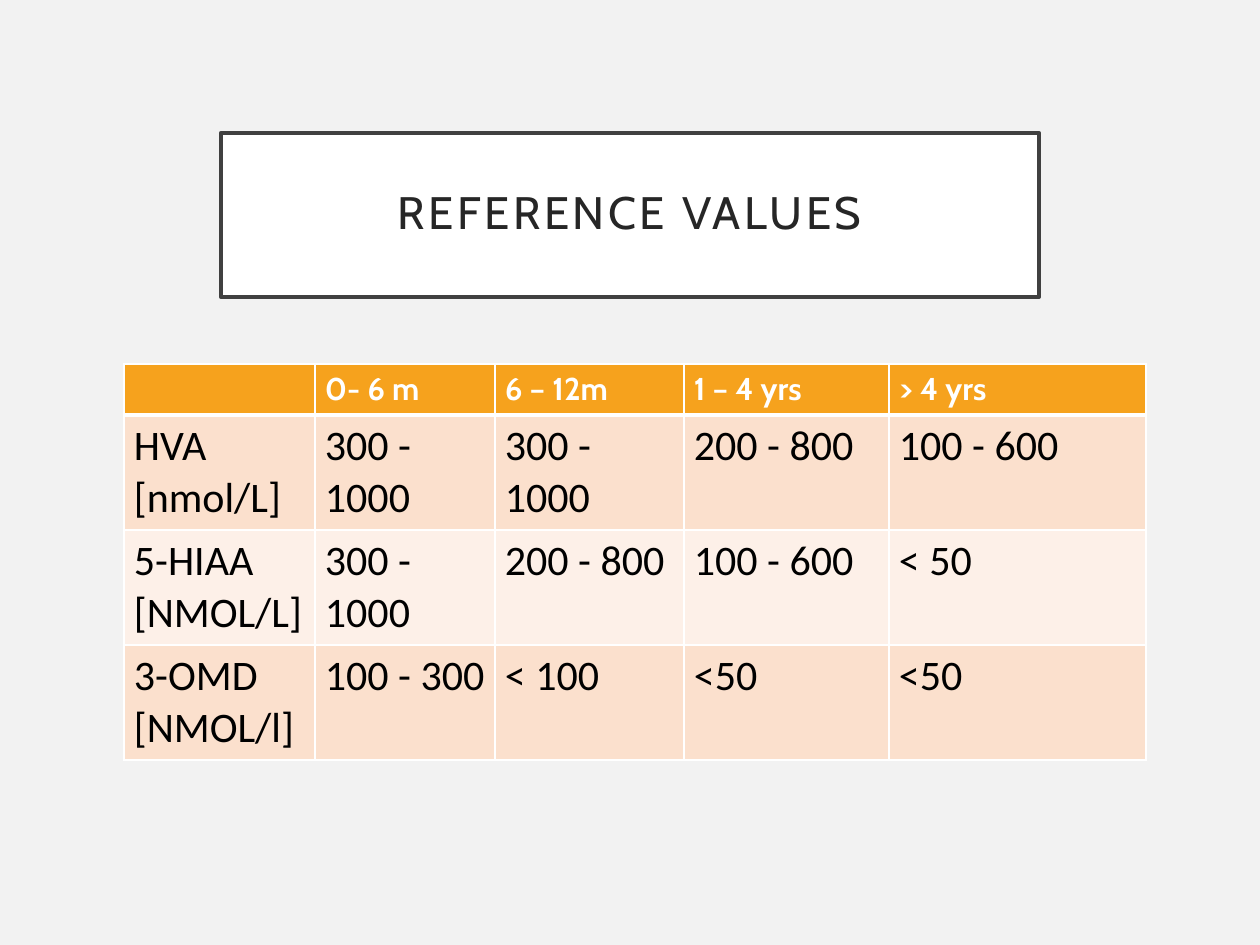
import lxml.etree
import pptx
import pptx.dml.color
import pptx.enum.shapes
import pptx.enum.text
import pptx.oxml.ns
import pptx.util

PX = 914400 / 126  # EMU in one px


def px(length):
    return pptx.util.Emu(round(length * PX))


def color(code):
    return pptx.dml.color.RGBColor.from_string(code)


class SlideBuilder:
    heading_font = "Cabin"
    body_font = "Calibri"
    white = "FFFFFF"
    header_fill = "F6A21D"
    band_fills = ("FBE0CD", "FDF0E8")

    def __init__(self, presentation, background):
        self.slide = presentation.slides.add_slide(presentation.slide_layouts[6])
        fill = self.slide.background.fill
        fill.solid()
        fill.fore_color.rgb = color(background)

    def style(self, paragraph, name, size, code, bold=False):
        font = paragraph.font
        font.name = name
        font.size = pptx.util.Pt(size)
        font.color.rgb = color(code)
        font.bold = bold

    def title(self, text, left, top, width, height):
        shape = self.slide.shapes.add_shape(
            pptx.enum.shapes.MSO_SHAPE.RECTANGLE,
            px(left), px(top), px(width), px(height))
        shape.shadow.inherit = False
        shape.fill.solid()
        shape.fill.fore_color.rgb = color(self.white)
        shape.line.color.rgb = color("404040")
        shape.line.width = pptx.util.Pt(2.5)
        frame = shape.text_frame
        frame.word_wrap = True
        frame.vertical_anchor = pptx.enum.text.MSO_ANCHOR.MIDDLE
        frame.margin_left = frame.margin_right = px(25)
        frame.margin_top = frame.margin_bottom = px(25)
        paragraph = frame.paragraphs[0]
        paragraph.alignment = pptx.enum.text.PP_ALIGN.CENTER
        paragraph.line_spacing = 0.9
        run = paragraph.add_run()
        run.text = text
        self.style(paragraph, self.heading_font, 26, "262626")
        run.font._element.set("spc", "200")  # letter spacing, 2 pt

    def borders(self, cell, **widths):
        properties = cell._tc.get_or_add_tcPr()
        for position, side in enumerate("LRTB"):
            line = lxml.etree.Element(
                pptx.oxml.ns.qn(f"a:ln{side}"),
                w=str(pptx.util.Pt(widths.get(side, 1))))
            fill = lxml.etree.SubElement(line, pptx.oxml.ns.qn("a:solidFill"))
            lxml.etree.SubElement(
                fill, pptx.oxml.ns.qn("a:srgbClr"), val=self.white)
            properties.insert(position, line)

    def cell(self, cell, text, row):
        header = row == 0
        cell.margin_left = cell.margin_right = px(10)
        cell.margin_top = cell.margin_bottom = px(6)
        cell.text = text
        paragraph = cell.text_frame.paragraphs[0]
        if header:
            self.style(paragraph, self.heading_font, 18, self.white, bold=True)
        else:
            self.style(paragraph, self.body_font, 24, "000000")
        cell.fill.solid()
        cell.fill.fore_color.rgb = color(
            self.header_fill if header else self.band_fills[(row - 1) % 2])
        # The rule under the header is thicker than the others
        self.borders(cell, B=3 if header else 1, T=3 if row == 1 else 1)

    def table(self, rows, left, top, widths, heights):
        table = self.slide.shapes.add_table(
            len(rows), len(widths), px(left), px(top),
            px(sum(widths)), px(sum(heights))).table
        for column, width in zip(table.columns, widths):
            column.width = px(width)
        for index, (values, height) in enumerate(zip(rows, heights)):
            table.rows[index].height = px(height)
            for column, text in enumerate(values):
                self.cell(table.cell(index, column), text, index)


def main():
    presentation = pptx.Presentation()
    presentation.slide_width = px(1260)
    presentation.slide_height = px(945)
    builder = SlideBuilder(presentation, "F2F2F2")

    # Title box
    builder.title("REFERENCE VALUES", 221, 133, 818, 164)

    # Reference values by age
    reference_values = [
        ("", "0- 6 m", "6 – 12m", "1 – 4 yrs", "> 4 yrs"),
        ("HVA [nmol/L]", "300 - 1000", "300 - 1000", "200 - 800", "100 - 600"),
        ("5-HIAA [NMOL/L]", "300 - 1000", "200 - 800", "100 - 600", "< 50"),
        ("3-OMD [NMOL/l]", "100 - 300", "< 100", "<50", "<50"),
    ]
    builder.table(reference_values, 124, 364,
                  widths=[191, 180, 189, 205, 257],
                  heights=[51, 115, 115, 115])

    presentation.save("out.pptx")


if __name__ == "__main__":
    main()
